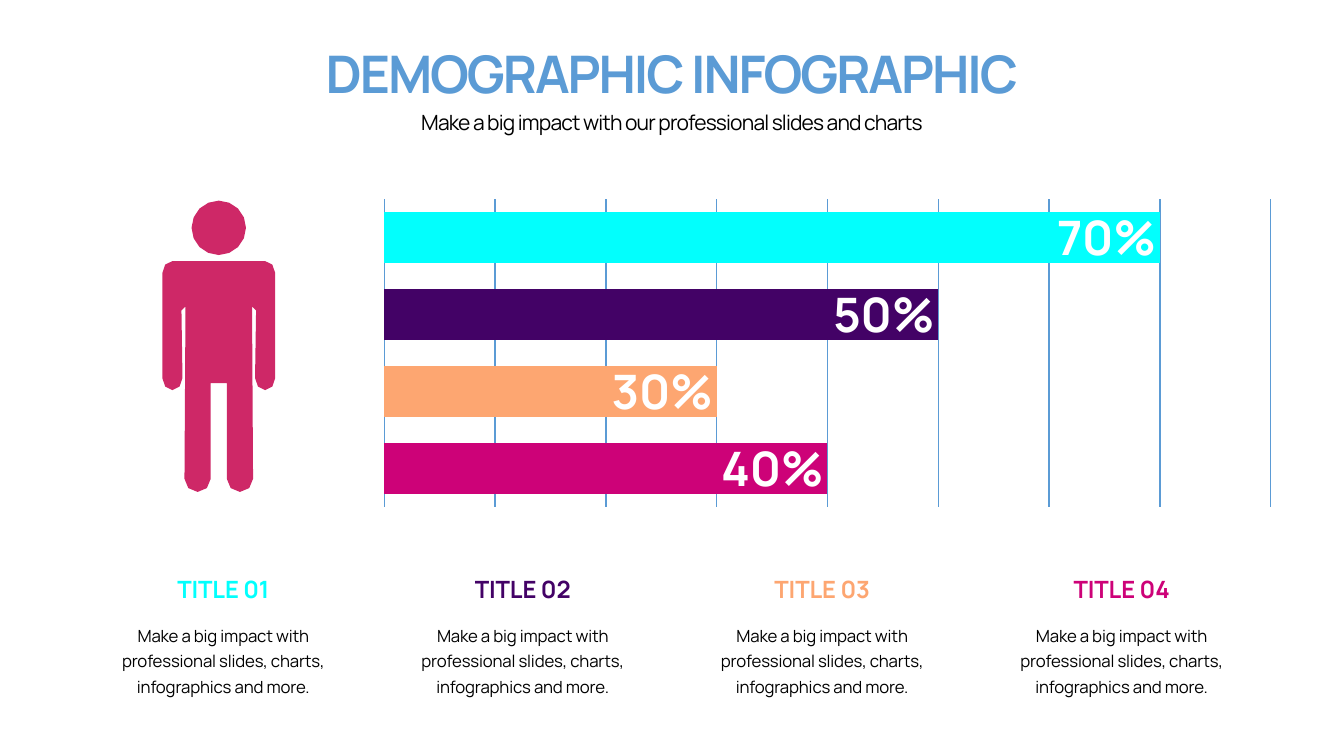
import math

from lxml import etree
from pptx import Presentation
from pptx import util as u
from pptx.chart.data import CategoryChartData
from pptx.dml.color import RGBColor
from pptx.enum import chart as c
from pptx.enum import text as t
from pptx.oxml import parse_xml
from pptx.oxml.ns import nsdecls

FONT = "Manrope"
BLUE = RGBColor(0x5B, 0x9B, 0xD5)
CYAN = RGBColor(0x02, 0xFF, 0xFD)
PURPLE = RGBColor(0x43, 0x02, 0x66)
ORANGE = RGBColor(0xFD, 0xA6, 0x71)
MAGENTA = RGBColor(0xCD, 0x02, 0x78)
ROSE = RGBColor(0xCE, 0x28, 0x67)
BLACK = RGBColor(0, 0, 0)
WHITE = RGBColor(255, 255, 255)

COLUMN_COLORS = [CYAN, PURPLE, ORANGE, MAGENTA]
COLUMN_TEXT = "Make a big impact with professional slides, charts, infographics and more."
# Bars run from the bottom up
BARS = [(0.4, MAGENTA), (0.3, ORANGE), (0.5, PURPLE), (0.7, CYAN)]


def set_font(font, size, color, bold=False):
    font.name = FONT
    font.size = u.Pt(size)
    font.bold = bold
    font.color.rgb = color


def write_text(shape, wording, size, color, spacing, bold=False,
               anchor=t.MSO_ANCHOR.TOP, line_spacing=None):
    frame = shape.text_frame
    frame.word_wrap = True
    frame.auto_size = t.MSO_AUTO_SIZE.SHAPE_TO_FIT_TEXT
    frame.vertical_anchor = anchor
    paragraph = frame.paragraphs[0]
    paragraph.alignment = t.PP_ALIGN.CENTER
    paragraph.space_before = u.Pt(0)
    if line_spacing:
        paragraph.line_spacing = u.Pt(line_spacing)
    set_font(paragraph.font, size, color, bold)
    run = paragraph.add_run()
    run.text = wording
    run._r.get_or_add_rPr().set("spc", str(round(spacing * 100)))


def place(shape, left, top, width, height):
    shape.left, shape.top = u.Inches(left), u.Inches(top)
    shape.width, shape.height = u.Inches(width), u.Inches(height)


def add_header(slide, left, top, width):
    title, subtitle = slide.shapes.title, slide.placeholders[1]
    place(title, left, top, width, 0.72)
    write_text(title, "DEMOGRAPHIC INFOGRAPHIC", 37, BLUE, -1.45, True,
               t.MSO_ANCHOR.BOTTOM)
    place(subtitle, left, top + 0.68, width, 0.35)
    write_text(subtitle, "Make a big impact with our professional slides and charts",
               15, BLACK, -0.6)


def arc(center_x, center_y, radius_x, radius_y, start, end, steps):
    angles = [math.radians(start + (end - start) * i / steps) for i in range(steps + 1)]
    return [(center_x + radius_x * math.cos(a), center_y + radius_y * math.sin(a))
            for a in angles]


def add_person(slide, left, top):
    axis = 0.56
    right_half = [
        *arc(1.02, 0.72, 0.1, 0.12, -90, 0, 2),     # shoulder
        *arc(1.02, 1.76, 0.1, 0.12, 0, 180, 4),     # hand
        *arc(0.89, 1.09, 0.04, 0.04, 0, -90, 1),    # armpit
        *arc(0.77, 2.76, 0.13, 0.13, 0, 180, 4),    # foot
        (0.64, 1.81),                               # crotch
    ]
    left_half = [(2 * axis - x, y) for x, y in reversed(right_half)]
    head = arc(axis, 0.27, 0.27, 0.27, 0, 360, 16)

    # Outlines are drawn in thousandths of an inch
    body, head = [[(x * 1000, y * 1000) for x, y in outline]
                  for outline in (right_half + left_half, head)]
    builder = slide.shapes.build_freeform(*body[0], scale=u.Inches(1) / 1000)
    builder.add_line_segments(body[1:])
    builder.move_to(*head[0])
    builder.add_line_segments(head[1:-1])
    person = builder.convert_to_shape(u.Inches(left), u.Inches(top))
    person.shadow.inherit = False
    person.fill.solid()
    person.fill.fore_color.rgb = ROSE
    person.line.fill.background()


def set_plot_layout(chart, **fractions):
    plot_area = chart._chartSpace.chart.plotArea
    for layout in plot_area.findall("{*}layout"):
        plot_area.remove(layout)
    layout = parse_xml(
        f'<c:layout {nsdecls("c")}><c:manualLayout><c:layoutTarget val="inner"/>'
        '<c:xMode val="edge"/><c:yMode val="edge"/></c:manualLayout></c:layout>')
    for name, value in fractions.items():
        etree.SubElement(layout[0], layout[0].tag.replace("manualLayout", name),
                         val=str(value))
    plot_area.insert(0, layout)


def add_bar_chart(slide, left, top, width, height):
    data = CategoryChartData(number_format="0%")
    data.categories = [str(i + 1) for i in range(len(BARS))]
    data.add_series("Series 1", [value for value, _ in BARS])
    chart = slide.shapes.add_chart(
        c.XL_CHART_TYPE.BAR_CLUSTERED, u.Inches(left), u.Inches(top),
        u.Inches(width), u.Inches(height), data).chart
    chart.has_legend = False
    chart.has_title = False
    set_font(chart.font, 34, WHITE, True)
    set_plot_layout(chart, x=0.06, y=0, w=0.94, h=0.91)

    # Axes
    chart.category_axis.visible = False
    axis = chart.value_axis
    axis.visible = False
    axis.minimum_scale, axis.maximum_scale, axis.major_unit = 0, 0.8, 0.1
    axis.has_major_gridlines = True
    axis.major_gridlines.format.line.color.rgb = BLUE
    axis.major_gridlines.format.line.width = u.Pt(1)

    # Bars and labels
    plot = chart.plots[0]
    plot.gap_width = 50
    plot.vary_by_categories = False
    series = plot.series[0]
    series.format.fill.solid()
    series.format.fill.fore_color.rgb = CYAN
    for i, (_, color) in enumerate(BARS[:-1]):
        fill = series.points[i].format.fill
        fill.solid()
        fill.fore_color.rgb = color
    labels = series.data_labels
    labels.show_value = True
    labels.position = c.XL_LABEL_POSITION.INSIDE_END
    labels.number_format = "0%"
    labels.number_format_is_linked = False
    set_font(labels.font, 34, WHITE, True)


def add_column(slide, left, top, width, heading, color):
    title = slide.shapes.add_textbox(0, 0, 0, 0)
    place(title, left, top, width, 0.39)
    write_text(title, heading, 17, color, -0.1, True, t.MSO_ANCHOR.BOTTOM)
    description = slide.shapes.add_textbox(0, 0, 0, 0)
    place(description, left, top + 0.47, width, 1.09)
    write_text(description, COLUMN_TEXT, 12, BLACK, -0.1, line_spacing=18)


def main():
    presentation = Presentation()
    presentation.slide_width = u.Inches(13.33)
    presentation.slide_height = u.Inches(7.5)
    slide = presentation.slides.add_slide(presentation.slide_layouts[0])
    add_header(slide, 0.83, 0.36, 11.67)
    add_person(slide, 1.61, 1.99)
    add_bar_chart(slide, 3.25, 1.97, 9.36, 3.36)
    for i, color in enumerate(COLUMN_COLORS):
        add_column(slide, 1.09 + 2.97 * i, 5.64, 2.25, f"TITLE {i + 1:02}", color)
    presentation.save("out.pptx")


if __name__ == "__main__":
    main()
